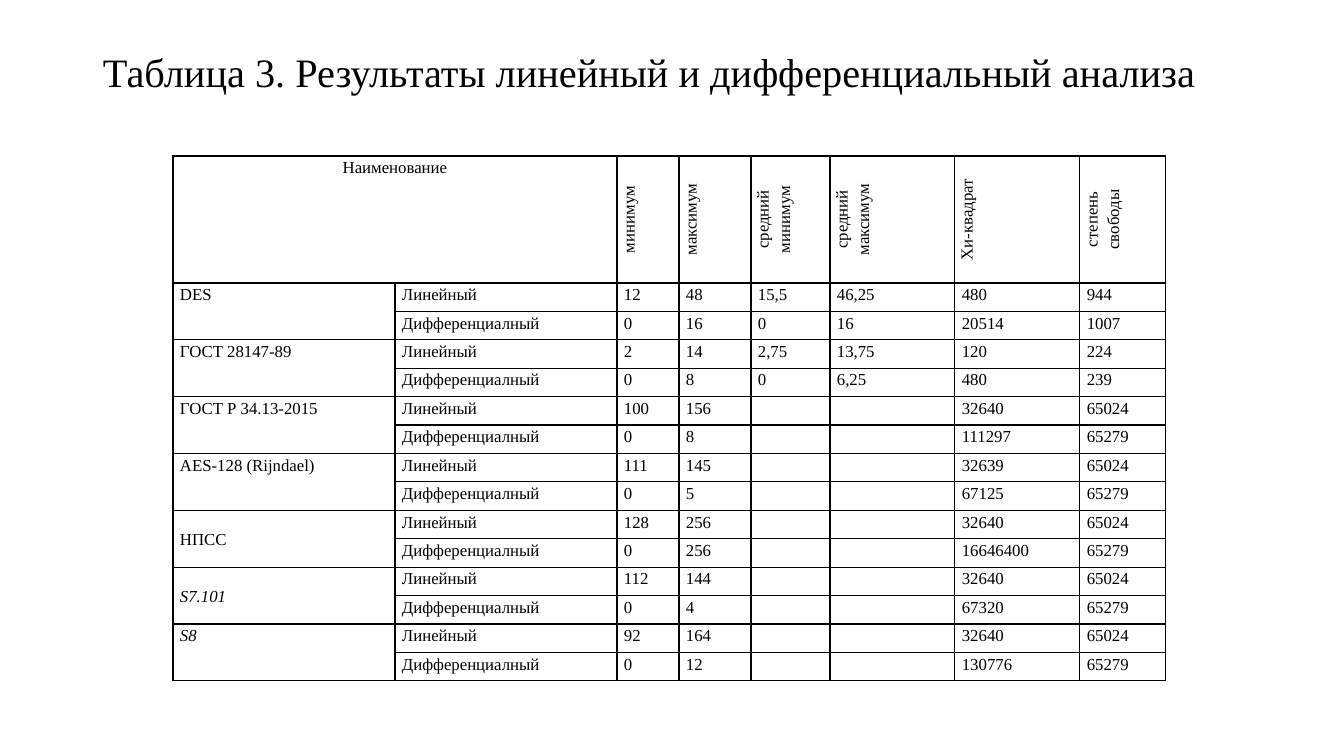
from lxml import etree
from pptx import Presentation
from pptx.dml.color import RGBColor as RGB
from pptx.enum.text import MSO_ANCHOR as Anchor, PP_ALIGN as Align
from pptx.oxml.ns import qn
from pptx.util import Pt

PX = 914400 / 100.8
COLORS = {"ink": "000000", "paper": "FFFFFF"}

COLUMN_WIDTHS = [222, 222, 62, 72, 79, 125, 125, 86]
MEASURES = ["минимум", "максимум", "средний\nминимум", "средний\nмаксимум",
            "Хи-квадрат", "степень\nсвободы"]
ANALYSES = ["Линейный", "Дифференциалный"]
# Cipher, linear results, differential results
RESULTS = [
    ("DES", ["12", "48", "15,5", "46,25", "480", "944"],
     ["0", "16", "0", "16", "20514", "1007"]),
    ("ГОСТ 28147-89", ["2", "14", "2,75", "13,75", "120", "224"],
     ["0", "8", "0", "6,25", "480", "239"]),
    ("ГОСТ Р 34.13-2015", ["100", "156", "", "", "32640", "65024"],
     ["0", "8", "", "", "111297", "65279"]),
    ("AES-128 (Rijndael)", ["111", "145", "", "", "32639", "65024"],
     ["0", "5", "", "", "67125", "65279"]),
    ("НПСС", ["128", "256", "", "", "32640", "65024"],
     ["0", "256", "", "", "16646400", "65279"]),
    ("S7.101", ["112", "144", "", "", "32640", "65024"],
     ["0", "4", "", "", "67320", "65279"]),
    ("S8", ["92", "164", "", "", "32640", "65024"],
     ["0", "12", "", "", "130776", "65279"]),
]
MIDDLE_CIPHERS = {"НПСС", "S7.101"}
ITALIC_CIPHERS = {"S7.101", "S8"}


def emu(px):
    return round(px * PX)


class SlideBuilder:
    font_name = "Times New Roman"

    def __init__(self, deck):
        self.slide = deck.slides.add_slide(deck.slide_layouts[6])
        fill = self.slide.background.fill
        fill.solid()
        fill.fore_color.rgb = RGB.from_string(COLORS["paper"])

    def set_text(self, frame, text, size, spacing, align=Align.LEFT, italic=False):
        frame.text = text
        for line in frame.paragraphs:
            line.alignment = align
            line.line_spacing = spacing
            line.font.name = self.font_name
            line.font.size = Pt(size)
            line.font.italic = italic
            line.font.color.rgb = RGB.from_string(COLORS["ink"])

    def title(self, text, left, top, width, height):
        box = self.slide.shapes.add_textbox(*map(emu, (left, top, width, height)))
        frame = box.text_frame
        frame.word_wrap = True
        frame.vertical_anchor = Anchor.MIDDLE
        self.set_text(frame, text, 28.8, 0.9)

    def table(self, left, top, widths, header_height, body_height, body_rows):
        frame = self.slide.shapes.add_table(
            body_rows + 1, len(widths),
            *map(emu, (left, top, sum(widths), header_height + body_height)))
        grid = frame.table
        grid.first_row = grid.horz_banding = False
        for column, width in zip(grid.columns, widths):
            column.width = emu(width)
        for row in grid.rows:
            row.height = emu(body_height / body_rows)
        grid.rows[0].height = emu(header_height)
        for cell in grid.iter_cells():
            self.cell(cell)
        return grid

    def cell(self, cell, text="", align=Align.JUSTIFY, anchor=Anchor.TOP,
             italic=False, upright=False, offset=0):
        cell.margin_left = cell.margin_right = emu(7)
        cell.margin_top = cell.margin_bottom = 0
        cell.vertical_anchor = anchor
        self.set_text(cell.text_frame, text, 12, 1.15, align, italic)
        if offset:
            cell.text_frame.paragraphs[0].space_before = emu(offset)
        props = cell._tc.get_or_add_tcPr()
        if upright:
            props.set("vert", "vert270")
        if props.find(qn("a:lnL")) is None:
            self.borders(props)
            cell.fill.background()

    def borders(self, props):
        for side in ("lnL", "lnR", "lnT", "lnB"):
            line = etree.SubElement(props, qn(f"a:{side}"), w=str(int(Pt(1))))
            fill = etree.SubElement(line, qn("a:solidFill"))
            etree.SubElement(fill, qn("a:srgbClr"), val=COLORS["ink"])


def main():
    deck = Presentation()
    deck.slide_width, deck.slide_height = emu(1344), emu(756)
    page = SlideBuilder(deck)

    # Table and its header
    grid = page.table(173, 156, COLUMN_WIDTHS, 127, 398, len(RESULTS) * len(ANALYSES))
    grid.cell(0, 0).merge(grid.cell(0, 1))
    page.cell(grid.cell(0, 0), "Наименование", Align.CENTER, offset=44)
    for column, measure in enumerate(MEASURES, 2):
        page.cell(grid.cell(0, column), measure, Align.CENTER, upright=True,
                  offset=22 if measure == "Хи-квадрат" else 0)

    # Two rows of results for each cipher
    for index, (cipher, *results) in enumerate(RESULTS):
        first = 1 + index * len(ANALYSES)
        grid.cell(first, 0).merge(grid.cell(first + 1, 0))
        page.cell(grid.cell(first, 0), cipher,
                  anchor=Anchor.MIDDLE if cipher in MIDDLE_CIPHERS else Anchor.TOP,
                  italic=cipher in ITALIC_CIPHERS)
        for row, (analysis, values) in enumerate(zip(ANALYSES, results), first):
            for column, value in enumerate([analysis, *values], 1):
                page.cell(grid.cell(row, column), value)

    # Title
    page.title("Таблица 3. Результаты линейный и дифференциальный анализа",
               93, 40, 1159, 69)

    deck.save("out.pptx")


if __name__ == "__main__":
    main()
